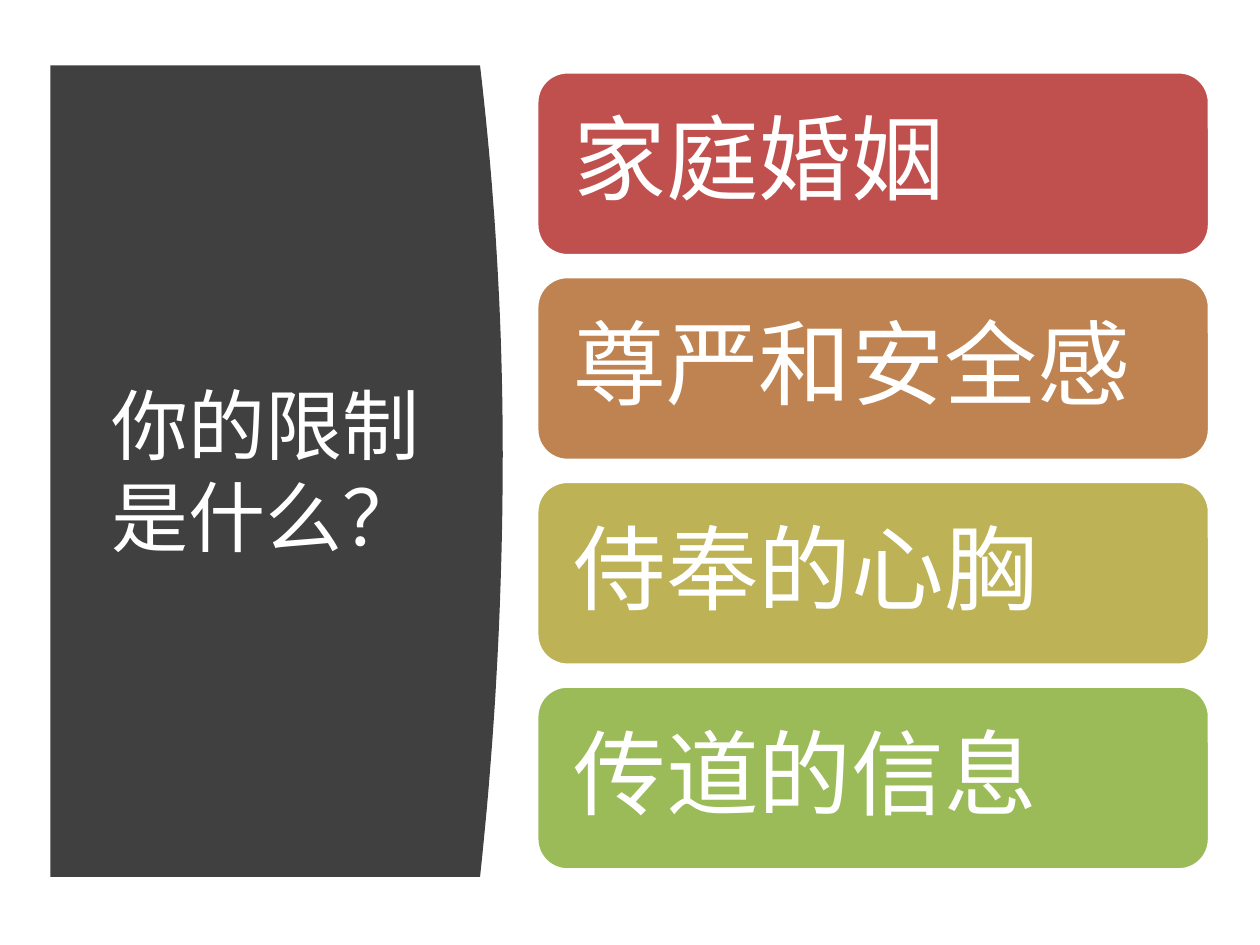
from pptx import Presentation
from pptx import util as u
from pptx.dml.color import RGBColor
from pptx.enum import shapes, text

WHITE = "FFFFFF"
DARK = "404040"
BARS = [
    ("家庭婚姻", "C0504D"),
    ("尊严和安全感", "BE8351"),
    ("侍奉的心胸", "BDB255"),
    ("传道的信息", "9BBB59"),
]


def rgb(value):
    return RGBColor.from_string(value)


def write(s, content, size, font="Calibri", color=WHITE, align=text.PP_ALIGN.LEFT,
          spacing=1.0, inset=0.1, inset_y=0.05):
    tf = s.text_frame
    tf.word_wrap = True
    tf.vertical_anchor = text.MSO_ANCHOR.MIDDLE
    tf.margin_left = tf.margin_right = u.Inches(inset)
    tf.margin_top = tf.margin_bottom = u.Inches(inset_y)
    p = tf.paragraphs[0]
    p.alignment = align
    p.line_spacing = spacing
    r = p.add_run()
    r.text = content
    r.font.size = u.Pt(size)
    r.font.name = font
    r.font.color.rgb = rgb(color)


class Deck:
    def __init__(self, width, height):
        self.prs = Presentation()
        self.prs.slide_width = u.Inches(width)
        self.prs.slide_height = u.Inches(height)
        self.slide = self.prs.slides.add_slide(self.prs.slide_layouts[6])

    def paint(self, s, fill, line=None):
        s.shadow.inherit = False
        s.fill.solid()
        s.fill.fore_color.rgb = rgb(fill)
        if line:
            s.line.color.rgb = rgb(line)
            s.line.width = u.Pt(2)
        else:
            s.line.fill.background()

    def curved_panel(self, left, top, edge, bottom, bulge, peak, fill, steps=48):
        """Panel whose right side bows out by a parabola, furthest at peak."""
        points = []
        for i in range(steps + 1):
            y = top + (bottom - top) * i / steps
            reach = peak - top if y < peak else bottom - peak
            x = edge + bulge * (1 - ((y - peak) / reach) ** 2)
            points.append((u.Inches(x), u.Inches(y)))
        points.append((u.Inches(left), u.Inches(bottom)))
        fb = self.slide.shapes.build_freeform(u.Inches(left), u.Inches(top), scale=1.0)
        fb.add_line_segments(points, close=True)
        self.paint(fb.convert_to_shape(), fill)

    def title(self, content, *box):
        s = self.slide.shapes.add_textbox(*map(u.Inches, box))
        write(s, content, 44, align=text.PP_ALIGN.CENTER)

    def bar(self, content, fill, *box):
        s = self.slide.shapes.add_shape(
            shapes.MSO_SHAPE.ROUNDED_RECTANGLE, *map(u.Inches, box))
        self.paint(s, fill, WHITE)
        write(s, content, 53, spacing=0.9, inset=0.22, inset_y=0.22)


def main():
    deck = Deck(10, 7.5)

    # Dark panel with the question
    deck.curved_panel(0.4, 0.52, 3.81, 6.96, bulge=0.18, peak=3.6, fill=DARK)
    deck.title("你的限制是什么？", 0.71, 1.11, 2.8, 5.24)

    # Evenly spaced answer bars
    top, pitch = 0.57, 1.625
    for i, (content, fill) in enumerate(BARS):
        deck.bar(content, fill, 4.26, top + i * pitch, 5.34, 1.46)

    deck.prs.save("out.pptx")


if __name__ == "__main__":
    main()
